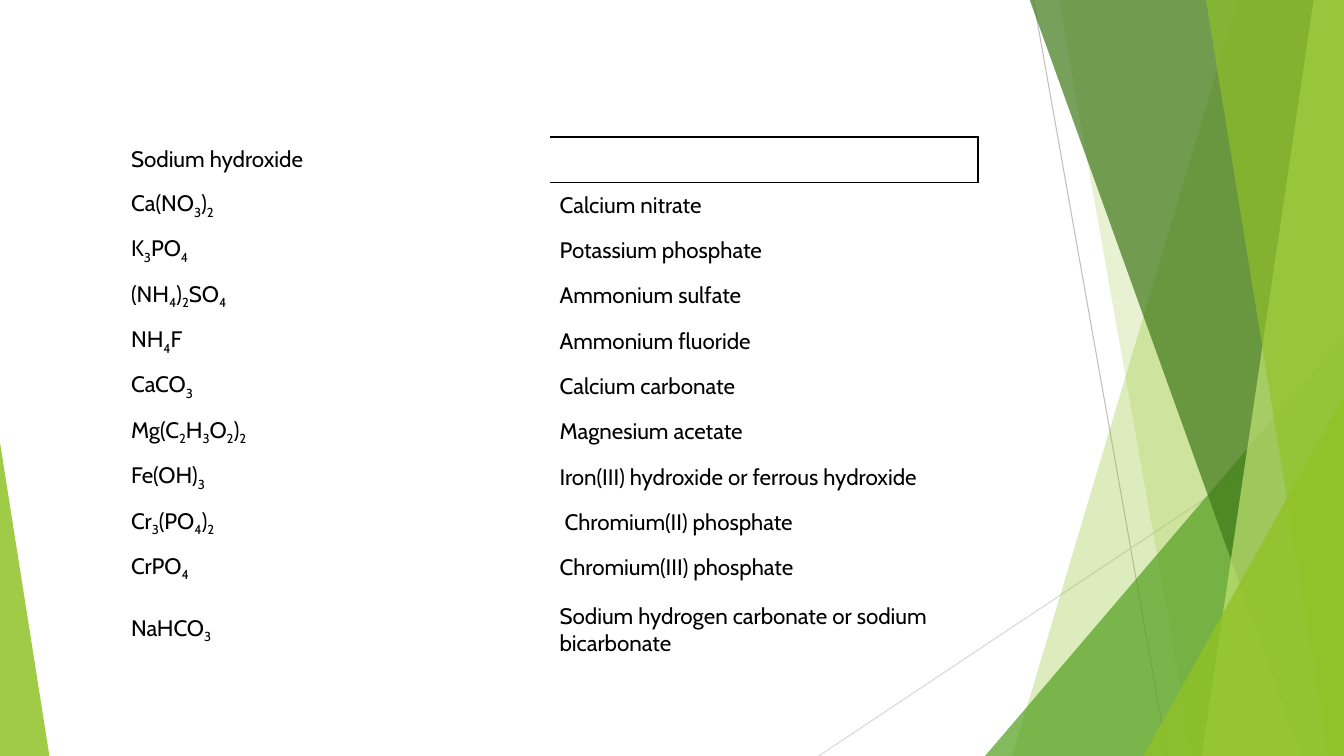
from dataclasses import dataclass
from itertools import groupby

from lxml import etree
from pptx import Presentation
from pptx import util as u
from pptx.dml.color import RGBColor
from pptx.enum import shapes, text
from pptx.oxml import ns

BLACK = RGBColor(0x00, 0x00, 0x00)
GRAY = RGBColor(0xBF, 0xBF, 0xBF)
LIGHT_GRAY = RGBColor(0xD9, 0xD9, 0xD9)
LIME = RGBColor(0x90, 0xC2, 0x26)
PALE_LIME = RGBColor(0xC0, 0xE4, 0x74)
GREEN = RGBColor(0x54, 0xA0, 0x21)
DARK_GREEN = RGBColor(0x3F, 0x78, 0x19)

WIDTH, HEIGHT = 13.33, 7.5
BAND_TOP = -0.01
FONT = "Cabin"
NO_GRID_STYLE = "{2D5ABB26-0587-4C30-8999-92F81FD0307C}"
ROW_HEIGHT, LAST_ROW_HEIGHT, COLUMN_WIDTH = 0.45, 0.78, 4.25


@dataclass
class Ray:
    start: tuple[float, float]
    end: tuple[float, float]
    color: RGBColor


@dataclass
class Band:
    """Full-height area from a slanted left side to the slide's right edge."""
    top_x: float
    bottom_x: float
    color: RGBColor
    opacity: int


@dataclass
class Corner:
    """Triangle standing on the slide's bottom edge, its tip at 0 (left) or 1 (right)."""
    left: float
    top: float
    width: float
    tip: int
    color: RGBColor
    opacity: int


@dataclass
class Compound:
    formula: str
    name: str


RAYS = [
    Ray((10.25, 0), (11.58, HEIGHT), GRAY),
    Ray((WIDTH, 4.03), (8.12, HEIGHT), LIGHT_GRAY),
]
FACETS = [
    Band(12.28, 10.04, LIME, 30),
    Band(10.5, 11.83, LIME, 20),
    Corner(9.77, 3.33, 3.56, 1, GREEN, 72),
    Band(10.21, 12.91, DARK_GREEN, 70),
    Band(13.03, 11.92, PALE_LIME, 70),
    Band(11.96, 13.18, LIME, 65),
    Corner(11.34, 3.93, 1.99, 1, LIME, 80),
    Corner(0, 4.39, 0.49, 0, LIME, 85),
]
COMPOUNDS = [
    Compound("Sodium hydroxide", ""),
    Compound("Ca(NO3)2", "Calcium nitrate"),
    Compound("K3PO4", "Potassium phosphate"),
    Compound("(NH4)2SO4", "Ammonium sulfate"),
    Compound("NH4F", "Ammonium fluoride"),
    Compound("CaCO3", "Calcium carbonate"),
    Compound("Mg(C2H3O2)2", "Magnesium acetate"),
    Compound("Fe(OH)3", "Iron(III) hydroxide or ferrous hydroxide"),
    Compound("Cr3(PO4)2", " Chromium(II) phosphate"),
    Compound("CrPO4", "Chromium(III) phosphate"),
    Compound("NaHCO3", "Sodium hydrogen carbonate or sodium bicarbonate"),
]


def draw_ray(slide, ray: Ray) -> None:
    ends = [u.Inches(value) for value in (*ray.start, *ray.end)]
    line = slide.shapes.add_connector(shapes.MSO_CONNECTOR.STRAIGHT, *ends)
    line.line.color.rgb = ray.color
    line.line.width = u.Pt(0.75)
    etree.SubElement(line._element.spPr, ns.qn("a:effectLst"))


def draw_facet(slide, facet: Band | Corner) -> None:
    if isinstance(facet, Band):
        outline = [(facet.top_x, BAND_TOP), (WIDTH, BAND_TOP),
                   (WIDTH, HEIGHT), (facet.bottom_x, HEIGHT)]
        points = [(u.Inches(x), u.Inches(y)) for x, y in outline]
        builder = slide.shapes.build_freeform(*points[0])
        builder.add_line_segments(points[1:], close=True)
        area = builder.convert_to_shape()
    else:
        area = slide.shapes.add_shape(
            shapes.MSO_SHAPE.ISOSCELES_TRIANGLE, u.Inches(facet.left), u.Inches(facet.top),
            u.Inches(facet.width), u.Inches(HEIGHT - facet.top))
        area.adjustments[0] = facet.tip
    area.shadow.inherit = False
    area.line.fill.background()
    area.fill.solid()
    area.fill.fore_color.rgb = facet.color
    color = area._element.spPr.find(".//" + ns.qn("a:srgbClr"))
    etree.SubElement(color, ns.qn("a:alpha"), val=str(facet.opacity * 1000))


def write_cell(cell, content: str) -> None:
    """Write the content with every digit lowered as a subscript."""
    cell.fill.background()
    cell.vertical_anchor = text.MSO_ANCHOR.MIDDLE
    paragraph = cell.text_frame.paragraphs[0]
    for is_subscript, letters in groupby(content, str.isdigit):
        run = paragraph.add_run()
        run.text = "".join(letters)
        run.font.name = FONT
        run.font.size = u.Pt(16)
        run.font.color.rgb = BLACK
        if is_subscript:
            run.font._element.set("baseline", "-25000")


def frame_cell(cell, sides: tuple[str, ...]) -> None:
    properties = cell._tc.get_or_add_tcPr()
    for position, side in enumerate(sides):
        border = etree.Element(ns.qn(f"a:{side}"), w=str(u.Pt(1)))
        fill = etree.SubElement(border, ns.qn("a:solidFill"))
        etree.SubElement(fill, ns.qn("a:srgbClr"), val=str(BLACK))
        properties.insert(position, border)


def draw_compounds(slide, compounds: list[Compound]) -> None:
    heights = [ROW_HEIGHT] * (len(compounds) - 1) + [LAST_ROW_HEIGHT]
    frame = slide.shapes.add_table(len(compounds), 2, u.Inches(1.2), u.Inches(1.36),
                                   u.Inches(2 * COLUMN_WIDTH), u.Inches(sum(heights)))
    table = frame.table
    table.first_row = table.horz_banding = False
    table._tbl.tblPr.find(ns.qn("a:tableStyleId")).text = NO_GRID_STYLE
    for row, height, compound in zip(table.rows, heights, compounds):
        row.height = u.Inches(height)
        write_cell(row.cells[0], compound.formula)
        write_cell(row.cells[1], compound.name)
    frame_cell(table.cell(0, 1), ("lnR", "lnT", "lnB"))


def main() -> None:
    deck = Presentation()
    deck.slide_width, deck.slide_height = u.Inches(WIDTH), u.Inches(HEIGHT)
    slide = deck.slides.add_slide(deck.slide_layouts[6])
    for ray in RAYS:
        draw_ray(slide, ray)
    for facet in FACETS:
        draw_facet(slide, facet)
    draw_compounds(slide, COMPOUNDS)
    deck.save("out.pptx")


if __name__ == "__main__":
    main()
